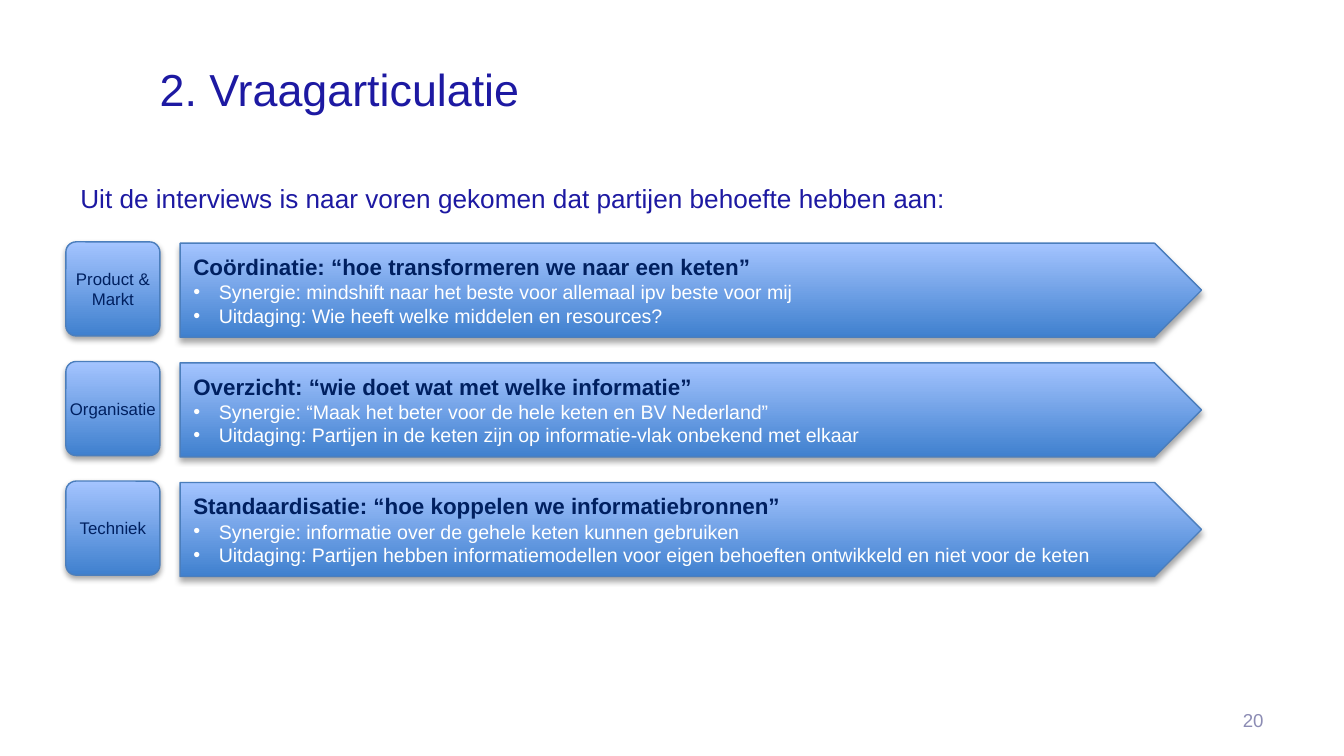
import lxml.etree
import pptx
import pptx.dml.color
import pptx.enum.shapes
import pptx.enum.text
import pptx.oxml
import pptx.oxml.ns
import pptx.util

COLORS = {
    "title": "1D19A2",
    "number": "8C8CB4",
    "heading": "002060",
    "detail": "FFFFFF",
    "bottom": "3F80CE",
    "top": "A4C4FF",
    "line": "4B7EBC",
    "shadow": "000000",
}
FONT = "Arial"
SHAPES = pptx.enum.shapes.MSO_SHAPE
ALIGN = pptx.enum.text.PP_ALIGN
ANCHOR = pptx.enum.text.MSO_ANCHOR

WIDTH = 10
HEIGHT = WIDTH * 9 / 16
ROW_TOP, ROW_PITCH, ROW_HEIGHT = 1.8, 0.89, 0.7
LABEL_LEFT, LABEL_WIDTH = 0.49, 0.7
ARROW_LEFT, ARROW_WIDTH = 1.34, 7.6
INDENT = 0.19

NEEDS = [
    ("Product & Markt", "Coördinatie: “hoe transformeren we naar een keten”",
     ["Synergie: mindshift naar het beste voor allemaal ipv beste voor mij",
      "Uitdaging: Wie heeft welke middelen en resources?"]),
    ("Organisatie", "Overzicht: “wie doet wat met welke informatie”",
     ["Synergie: “Maak het beter voor de hele keten en BV Nederland”",
      "Uitdaging: Partijen in de keten zijn op informatie-vlak onbekend met elkaar"]),
    ("Techniek", "Standaardisatie: “hoe koppelen we informatiebronnen”",
     ["Synergie: informatie over de gehele keten kunnen gebruiken",
      "Uitdaging: Partijen hebben informatiemodellen voor eigen behoeften ontwikkeld en niet voor de keten"]),
]


def rgb(name):
    return pptx.dml.color.RGBColor.from_string(COLORS[name])


def inches(*lengths):
    return [pptx.util.Inches(length) for length in lengths]


def write(paragraph, text, size, color, align=ALIGN.LEFT, bold=False):
    paragraph.text = text
    paragraph.alignment = align
    font = paragraph.font
    font.name = FONT
    font.size = pptx.util.Pt(size)
    font.bold = bold
    font.color.rgb = rgb(color)


def add_bullet(paragraph):
    properties = paragraph._p.get_or_add_pPr()
    indent = pptx.util.Inches(INDENT)
    properties.set("marL", str(indent))
    properties.set("indent", str(-indent))
    name = pptx.oxml.ns.qn
    lxml.etree.SubElement(properties, name("a:buFont")).set("typeface", FONT)
    lxml.etree.SubElement(properties, name("a:buChar")).set("char", "•")


def add_text(slide, box, text, size, color, anchor, align=ALIGN.LEFT):
    frame = slide.shapes.add_textbox(*inches(*box)).text_frame
    frame.word_wrap = True
    frame.vertical_anchor = anchor
    write(frame.paragraphs[0], text, size, color, align)


def add_shadow(shape):
    shape.shadow.inherit = False
    effects = shape._element.spPr.find(pptx.oxml.ns.qn("a:effectLst"))
    effects.append(pptx.oxml.parse_xml(
        f'<a:outerShdw {pptx.oxml.ns.nsdecls("a")} blurRad="{pptx.util.Pt(3.1)}" '
        f'dist="{pptx.util.Pt(1.8)}" dir="5400000" rotWithShape="0">'
        f'<a:srgbClr val="{COLORS["shadow"]}"><a:alpha val="35000"/></a:srgbClr>'
        '</a:outerShdw>'))


def add_block(slide, kind, box):
    shape = slide.shapes.add_shape(kind, *inches(*box))
    shape.fill.gradient()
    shape.fill.gradient_angle = 90
    for stop, color, position in zip(shape.fill.gradient_stops, ("bottom", "top"), (0, 1)):
        stop.color.rgb = rgb(color)
        stop.position = position
    shape.line.color.rgb = rgb("line")
    shape.line.width = pptx.util.Pt(0.75)
    add_shadow(shape)
    shape.text_frame.word_wrap = True
    shape.text_frame.vertical_anchor = ANCHOR.MIDDLE
    return shape


def add_label(slide, top, text):
    shape = add_block(slide, SHAPES.ROUNDED_RECTANGLE,
                      (LABEL_LEFT, top, LABEL_WIDTH, ROW_HEIGHT))
    shape.adjustments[0] = 0.11
    frame = shape.text_frame
    frame.margin_left = frame.margin_right = frame.margin_top = frame.margin_bottom = 0
    write(frame.paragraphs[0], text, 9, "heading", ALIGN.CENTER)


def add_arrow(slide, top, heading, details):
    shape = add_block(slide, SHAPES.PENTAGON, (ARROW_LEFT, top, ARROW_WIDTH, ROW_HEIGHT))
    frame = shape.text_frame
    write(frame.paragraphs[0], heading, 12, "heading", bold=True)
    for detail in details:
        paragraph = frame.add_paragraph()
        add_bullet(paragraph)
        write(paragraph, detail, 10.5, "detail")


def main():
    presentation = pptx.Presentation()
    presentation.slide_width, presentation.slide_height = inches(WIDTH, HEIGHT)
    slide = presentation.slides.add_slide(presentation.slide_layouts[6])
    add_text(slide, (1.09, 0.23, 8.41, 0.68), "2. Vraagarticulatie",
             24, "title", ANCHOR.BOTTOM)
    add_text(slide, (0.5, 1.31, 9, 3.71),
             "Uit de interviews is naar voren gekomen dat partijen behoefte hebben aan:",
             14, "title", ANCHOR.TOP)
    add_text(slide, (7.17, 5.21, 2.33, 0.3), "20", 10, "number", ANCHOR.MIDDLE, ALIGN.RIGHT)
    for row, (label, heading, details) in enumerate(NEEDS):
        top = ROW_TOP + row * ROW_PITCH
        add_arrow(slide, top + 0.01, heading, details)
        add_label(slide, top, label)
    presentation.save("out.pptx")


if __name__ == "__main__":
    main()
